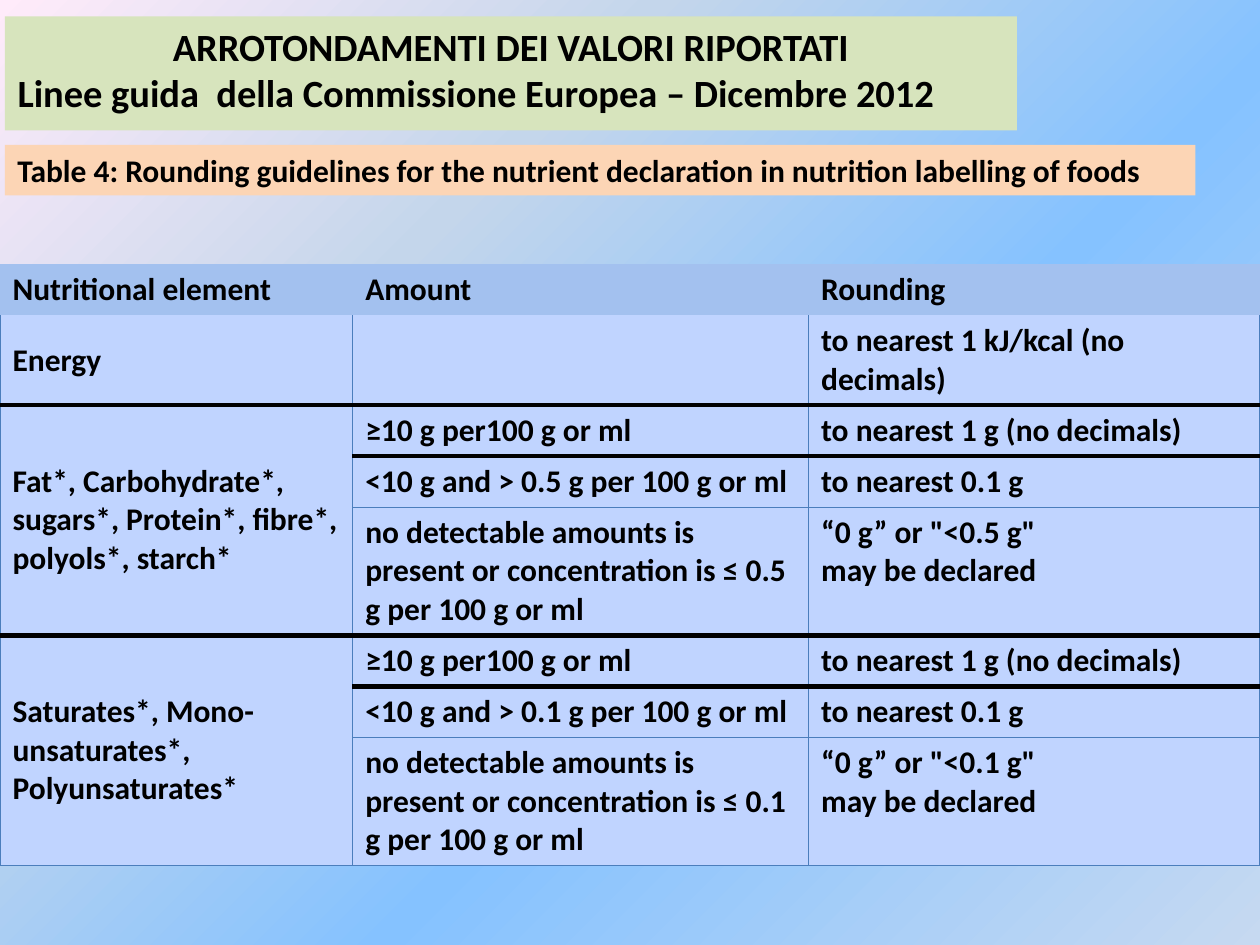
from lxml.etree import SubElement
from pptx import Presentation
from pptx.dml.color import RGBColor
from pptx.enum.shapes import MSO_SHAPE
from pptx.enum.text import MSO_ANCHOR as Anchor, PP_ALIGN as Align
from pptx.oxml import parse_xml
from pptx.oxml.ns import nsdecls, qn
from pptx.util import Cm, Pt

COLORS = {"text": "000000", "title": "D7E4BD", "caption": "FCD5B5",
          "header": "A3C1EF", "body": "C0D4FF",
          "thin": "4B7EBC", "thick": "000000"}
STOPS = [(0, "C6D9F1", 36), (40, "85C2FF", 100),
         (70, "C4D6EB", 100), (100, "FFEBFA", 100)]
WIDTHS = {"thin": Pt(0.75), "thick": Pt(3)}
NO_STYLE = "{2D5ABB26-0587-4C30-8999-92F81FD0307C}"


def write(frame, text, size):
    frame.text = text
    frame.word_wrap = True
    for para in frame.paragraphs:
        para.alignment = Align.LEFT
        for span in para.runs:
            span.font.name = "Calibri"
            span.font.size = Pt(size)
            span.font.bold = True
            span.font.color.rgb = RGBColor.from_string(COLORS["text"])


def add_border(cell, side, kind):
    line = SubElement(cell._tc.get_or_add_tcPr(), qn(f"a:ln{side}"),
                      w=str(WIDTHS[kind]))
    fill = SubElement(line, qn("a:solidFill"))
    SubElement(fill, qn("a:srgbClr"), val=COLORS[kind])


deck = Presentation()
deck.slide_width, deck.slide_height = Cm(25.4), Cm(19.05)
page = deck.slides.add_slide(deck.slide_layouts[5])

# Background: circular gradient centred on the bottom right corner
page.background.fill.gradient()
linear = page.element.find(".//" + qn("a:gradFill"))
stops = "".join(
    f'<a:gs pos="{pos * 1000}"><a:srgbClr val="{color}">'
    f'<a:alpha val="{alpha * 1000}"/></a:srgbClr></a:gs>'
    for pos, color, alpha in STOPS)
linear.getparent().replace(linear, parse_xml(
    f'<a:gradFill {nsdecls("a")} rotWithShape="1"><a:gsLst>{stops}</a:gsLst>'
    '<a:path path="circle"><a:fillToRect l="100000" t="100000"/></a:path>'
    '</a:gradFill>'))

# Title
title = page.shapes.title
title.left, title.top, title.width, title.height = (
    Cm(0.1), Cm(0.33), Cm(20.4), Cm(2.3))
title.fill.solid()
title.fill.fore_color.rgb = RGBColor.from_string(COLORS["title"])
title.text_frame.vertical_anchor = Anchor.TOP
write(title.text_frame, "ARROTONDAMENTI DEI VALORI RIPORTATI\n"
      "Linee guida  della Commissione Europea – Dicembre 2012", 22)
title.text_frame.paragraphs[0].alignment = Align.CENTER

# Table caption
caption = page.shapes.add_shape(
    MSO_SHAPE.RECTANGLE, Cm(0.1), Cm(2.92), Cm(24), Cm(1.02))
caption.shadow.inherit = False
caption.line.fill.background()
caption.fill.solid()
caption.fill.fore_color.rgb = RGBColor.from_string(COLORS["caption"])
write(caption.text_frame, "Table 4: Rounding guidelines for the nutrient "
      "declaration in nutrition labelling of foods", 18)

# Table contents: each nutrient group has three amounts
rows = [("Nutritional element", "Amount", "Rounding"),
        ("Energy", "", "to nearest 1 kJ/kcal (no decimals)")]
groups = [
    ("Fat*, Carbohydrate*, sugars*, Protein*, fibre*, polyols*, starch*", "0.5"),
    ("Saturates*, Mono-unsaturates*, Polyunsaturates*", "0.1")]
for nutrients, limit in groups:
    rows += [
        (nutrients, "≥10 g per100 g or ml", "to nearest 1 g (no decimals)"),
        ("", f"<10 g and > {limit} g per 100 g or ml", "to nearest 0.1 g"),
        ("", "no detectable amounts is present or concentration is "
         f"≤ {limit} g per 100 g or ml",
         f"“0 g” or \"<{limit} g\"\nmay be declared")]

# Table grid
heights = [1.03, 1.77] + [1.03, 1.03, 2.54] * len(groups)
table = page.shapes.add_table(len(rows), 3, Cm(0), Cm(5.33),
                              Cm(25.4), Cm(sum(heights))).table
table._tbl.tblPr.find(qn("a:tableStyleId")).text = NO_STYLE
table.horz_banding = False
for column, width in zip(table.columns, (7.11, 9.19, 9.1)):
    column.width = Cm(width)
for row, height in zip(table.rows, heights):
    row.height = Cm(height)
group_starts = (2, 5)
for start in group_starts:
    table.cell(start, 0).merge(table.cell(start + 2, 0))

# Thick rules close Energy, the first group and each group's first amount
thick_below = (1, 2, 4, 5)
for r, texts in enumerate(rows):
    for c, text in enumerate(texts):
        cell = table.cell(r, c)
        if cell.is_spanned:
            continue
        last = r + 2 if cell.is_merge_origin else r
        if r > 0:
            add_border(cell, "L", "thin")
            add_border(cell, "R", "thin")
            if r > 1:
                add_border(cell, "T", "thick" if r - 1 in thick_below else "thin")
            add_border(cell, "B", "thick" if last in thick_below else "thin")
        cell.fill.solid()
        cell.fill.fore_color.rgb = RGBColor.from_string(
            COLORS["body" if r else "header"])
        cell.vertical_anchor = Anchor.TOP if r and c else Anchor.MIDDLE
        write(cell.text_frame, text, 18)

deck.save("out.pptx")
